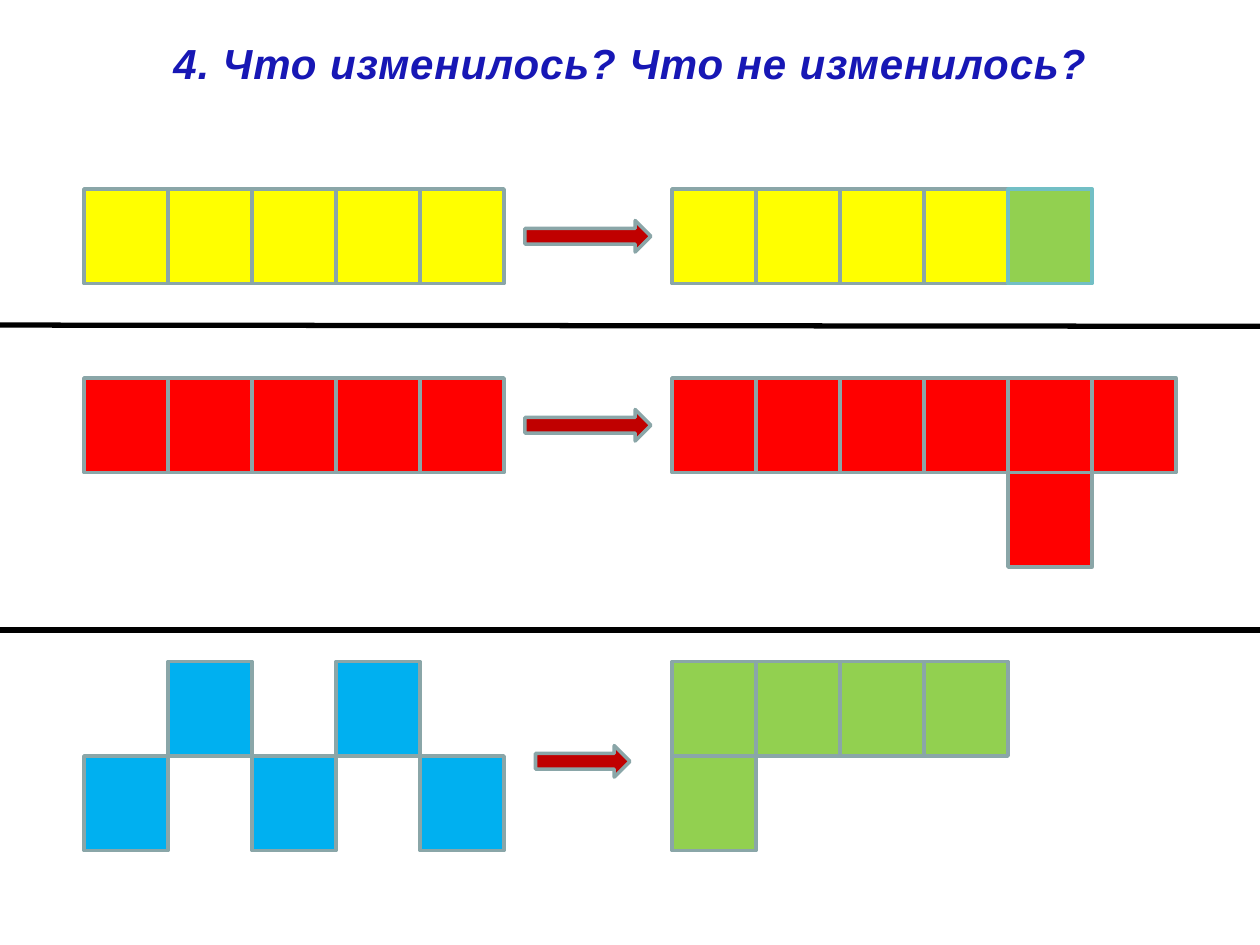
from lxml.etree import SubElement
from pptx import Presentation
from pptx.dml.color import RGBColor
from pptx.enum.shapes import MSO_CONNECTOR, MSO_SHAPE
from pptx.enum.text import MSO_ANCHOR, MSO_AUTO_SIZE, PP_ALIGN
from pptx.oxml.ns import qn
from pptx.util import Inches, Pt

WIDTH, HEIGHT = Inches(10), Inches(7.5)
COL, ROW = WIDTH / 15, HEIGHT / 10
LEFT, RIGHT = 1, 8  # first grid column of each side

YELLOW = RGBColor(0xFF, 0xFF, 0x00)
RED = RGBColor(0xFF, 0x00, 0x00)
BLUE = RGBColor(0x00, 0xB0, 0xF0)
GREEN = RGBColor(0x92, 0xD0, 0x50)
DARK_RED = RGBColor(0xC0, 0x00, 0x00)
GREY = RGBColor(0x8A, 0xA6, 0xA8)
TEAL = RGBColor(0x72, 0xBF, 0xC5)
BLACK = RGBColor(0x00, 0x00, 0x00)
TITLE_COLORS = ((0.25, RGBColor(0x17, 0x17, 0xB5)),
                (1.0, RGBColor(0x0D, 0x0D, 0x84)))


def add_title(s, text):
    tb = s.shapes.add_textbox(0, int(ROW / 3), WIDTH, int(ROW * 2 / 3))
    tf = tb.text_frame
    tf.word_wrap = True
    tf.auto_size = MSO_AUTO_SIZE.SHAPE_TO_FIT_TEXT
    tf.vertical_anchor = MSO_ANCHOR.TOP
    tf.text = text
    p = tf.paragraphs[0]
    p.alignment = PP_ALIGN.CENTER
    r = p.runs[0]
    font = r.font
    font.name, font.size = "Arial", Pt(24)
    font.bold = font.italic = True
    font.fill.gradient()
    font.fill.gradient_angle = 270
    for stop, (position, color) in zip(font.fill.gradient_stops, TITLE_COLORS):
        stop.position = position
        stop.color.rgb = color
    r._r.get_or_add_rPr().set("spc", "50")


def add_block(shapes, kind, col, row, cols, rows, fill, line=GREY):
    """Add an outlined shape placed and sized in grid units."""
    sp = shapes.add_shape(kind, round(col * COL), round(row * ROW),
                          round(cols * COL), round(rows * ROW))
    sp.shadow.inherit = False
    sp.fill.solid()
    sp.fill.fore_color.rgb = fill
    sp.line.color.rgb = line
    sp.line.width = Pt(2)


def add_figure(s, col, row, cells, fill):
    """Add a group of unit cells given as (column, row) offsets."""
    group = s.shapes.add_group_shape()
    for dx, dy in cells:
        add_block(group.shapes, MSO_SHAPE.RECTANGLE,
                  col + dx, row + dy, 1, 1, fill)
    return group


def add_arrow(s, col, row, cols):
    add_block(s.shapes, MSO_SHAPE.RIGHT_ARROW, col, row, cols, 1 / 3, DARK_RED)


def add_divider(s, left_y, right_y):
    line = s.shapes.add_connector(MSO_CONNECTOR.STRAIGHT,
                                  WIDTH, Inches(right_y), 0, Inches(left_y))
    line.line.color.rgb = BLACK
    line.line.width = Pt(3)
    SubElement(line._element.spPr, qn("a:effectLst"))


def strip(count):
    return [(i, 0) for i in range(count)]


def main():
    prs = Presentation()
    prs.slide_width, prs.slide_height = WIDTH, HEIGHT
    s = prs.slides.add_slide(prs.slide_layouts[6])

    add_title(s, "4. Что изменилось? Что не изменилось?")
    for col, row, cols in ((6.25, 7 / 3, 1.5), (6.25, 13 / 3, 1.5),
                           (6.375, 7.89, 1.125)):
        add_arrow(s, col, row, cols)

    add_figure(s, LEFT, 2, strip(5), YELLOW)
    add_figure(s, LEFT, 4, strip(5), RED)
    zigzag = [(i, (i + 1) % 2) for i in range(5)]
    add_figure(s, LEFT, 7, zigzag, BLUE)

    add_figure(s, RIGHT, 4, [(4, 1)] + strip(6), RED)
    add_figure(s, RIGHT, 7, strip(4) + [(0, 1)], GREEN)

    add_divider(s, 5, 5)
    add_divider(s, 2.58, 2.59)

    changed = add_figure(s, RIGHT, 2, strip(4), YELLOW)
    add_block(changed.shapes, MSO_SHAPE.RECTANGLE, RIGHT + 4, 2, 1, 1,
              GREEN, TEAL)

    prs.save("out.pptx")


if __name__ == "__main__":
    main()
